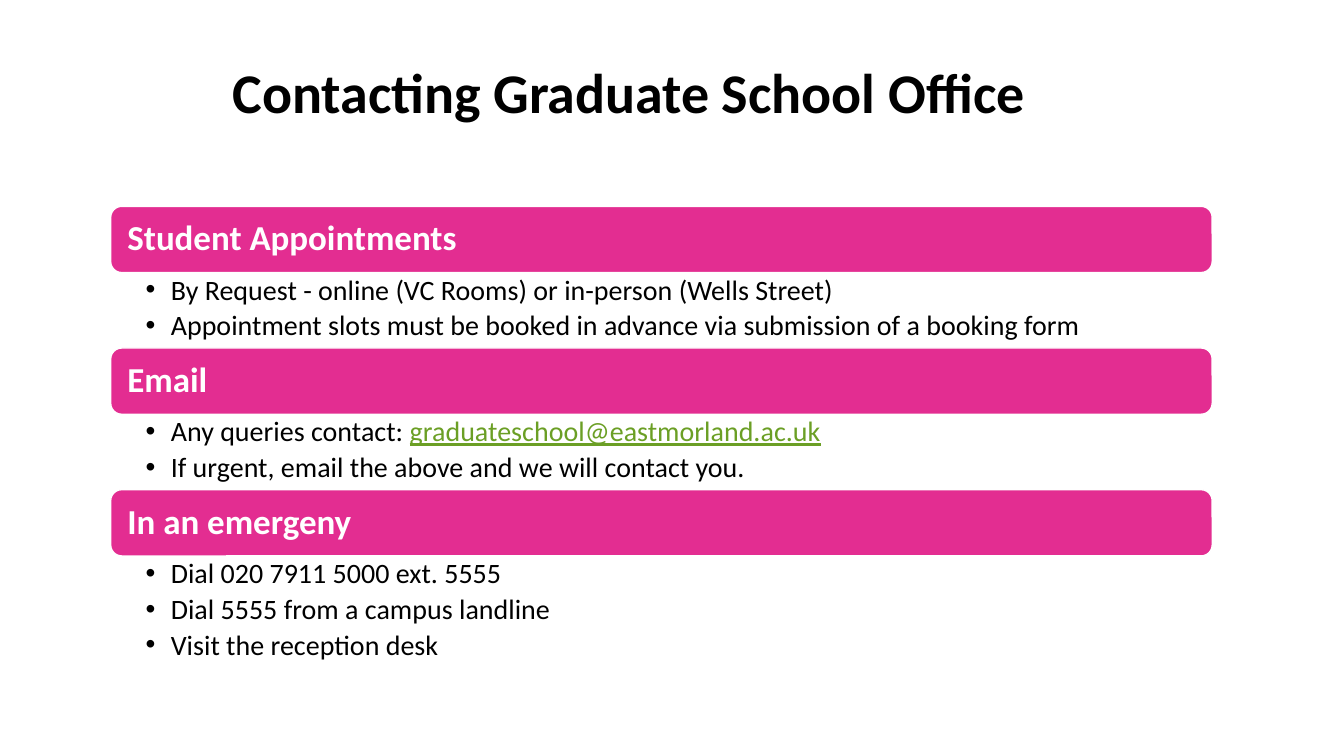
from pptx import Presentation
from pptx.dml.color import RGBColor as RGB
from pptx.enum.shapes import MSO_SHAPE as Shape
from pptx.enum.text import MSO_ANCHOR as Anchor, MSO_AUTO_SIZE as Fit, PP_ALIGN as Align
from pptx.oxml.ns import qn
from pptx.util import Cm, Pt
from lxml.etree import SubElement

COLORS = {"black": "000000", "white": "FFFFFF", "pink": "E32D91", "green": "6B9F25"}
FONT = "Calibri"
LEFT, TOP, WIDTH = 2.79, 5.2, 27.76
BAR, ROW = 1.67, 0.95
MAIL = "graduateschool@eastmorland.ac.uk"
PARTS = [
    ("Student Appointments", [
        "By Request - online (VC Rooms) or in-person (Wells Street)",
        "Appointment slots must be booked in advance via submission of a booking form",
    ]),
    ("Email", [
        "Any queries contact: ",
        "If urgent, email the above and we will contact you.",
    ]),
    ("In an emergeny", [
        "Dial 020 7911 5000 ext. 5555",
        "Dial 5555 from a campus landline",
        "Visit the reception desk",
    ]),
]


def tint(name):
    return RGB.from_string(COLORS[name])


def style(run, size, color, bold=False):
    font = run.font
    font.name, font.size, font.bold = FONT, Pt(size), bold
    font.color.rgb = tint(color)


def place(shape, left, top, width, height):
    shape.left, shape.top = Cm(left), Cm(top)
    shape.width, shape.height = Cm(width), Cm(height)


def setup(frame, anchor, left, top, right):
    frame.word_wrap = True
    frame.auto_size = Fit.NONE
    frame.vertical_anchor = anchor
    frame.margin_left, frame.margin_right = Cm(left), Cm(right)
    frame.margin_top = frame.margin_bottom = Cm(top)


def align(para, after=0):
    para.alignment = Align.LEFT
    para.line_spacing = 0.9
    para.space_before, para.space_after = Pt(0), Pt(after)


def bullet(para):
    props = para._p.get_or_add_pPr()
    props.set("marL", str(Cm(0.635)))
    props.set("indent", str(-Cm(0.635)))
    SubElement(props, qn("a:buFont")).set("typeface", "Arial")
    SubElement(props, qn("a:buChar")).set("char", "•")


def add_title(slide, text):
    title = slide.shapes.title
    place(title, 5.61, 1.5, 24.97, 3.1)
    frame = title.text_frame
    frame.text = text
    setup(frame, Anchor.TOP, 0.25, 0.13, 0.25)
    para = frame.paragraphs[0]
    align(para)
    style(para.runs[0], 40, "black", True)


def add_bar(slide, text, top):
    bar = slide.shapes.add_shape(
        Shape.ROUNDED_RECTANGLE, Cm(LEFT), Cm(top), Cm(WIDTH), Cm(BAR))
    bar.shadow.inherit = False
    bar.fill.solid()
    bar.fill.fore_color.rgb = tint("pink")
    bar.line.color.rgb = tint("white")
    bar.line.width = Pt(1)
    frame = bar.text_frame
    frame.text = text
    setup(frame, Anchor.MIDDLE, 0.34, 0.25, 0.34)
    para = frame.paragraphs[0]
    align(para)
    style(para.runs[0], 25, "white", True)


def fill_list(body, rows, top):
    place(body, LEFT, top, WIDTH, ROW * len(rows))
    frame = body.text_frame
    frame.text = "\n".join(rows)
    setup(frame, Anchor.TOP, 0.88, 0.08, 0.48)
    for para in frame.paragraphs:
        align(para, 4)
        bullet(para)
        style(para.runs[0], 20, "black")


def add_mail(para):
    run = para.add_run()
    run.text = MAIL
    style(run, 20, "green")
    run.font.underline = True


def main():
    deck = Presentation()
    deck.slide_width, deck.slide_height = Cm(33.87), Cm(19.05)
    slide = deck.slides.add_slide(deck.slide_layouts.get_by_name("Comparison"))
    add_title(slide, "Contacting Graduate School Office")
    *bodies, spare = [p for p in slide.placeholders if p.placeholder_format.idx in range(1, 5)]
    spare.element.getparent().remove(spare.element)
    top = TOP
    for body, (head, rows) in zip(bodies, PARTS):
        add_bar(slide, head, top)
        fill_list(body, rows, top + BAR)
        if head == "Email":
            add_mail(body.text_frame.paragraphs[0])
        top += BAR + ROW * len(rows)
    deck.save("out.pptx")


if __name__ == "__main__":
    main()
